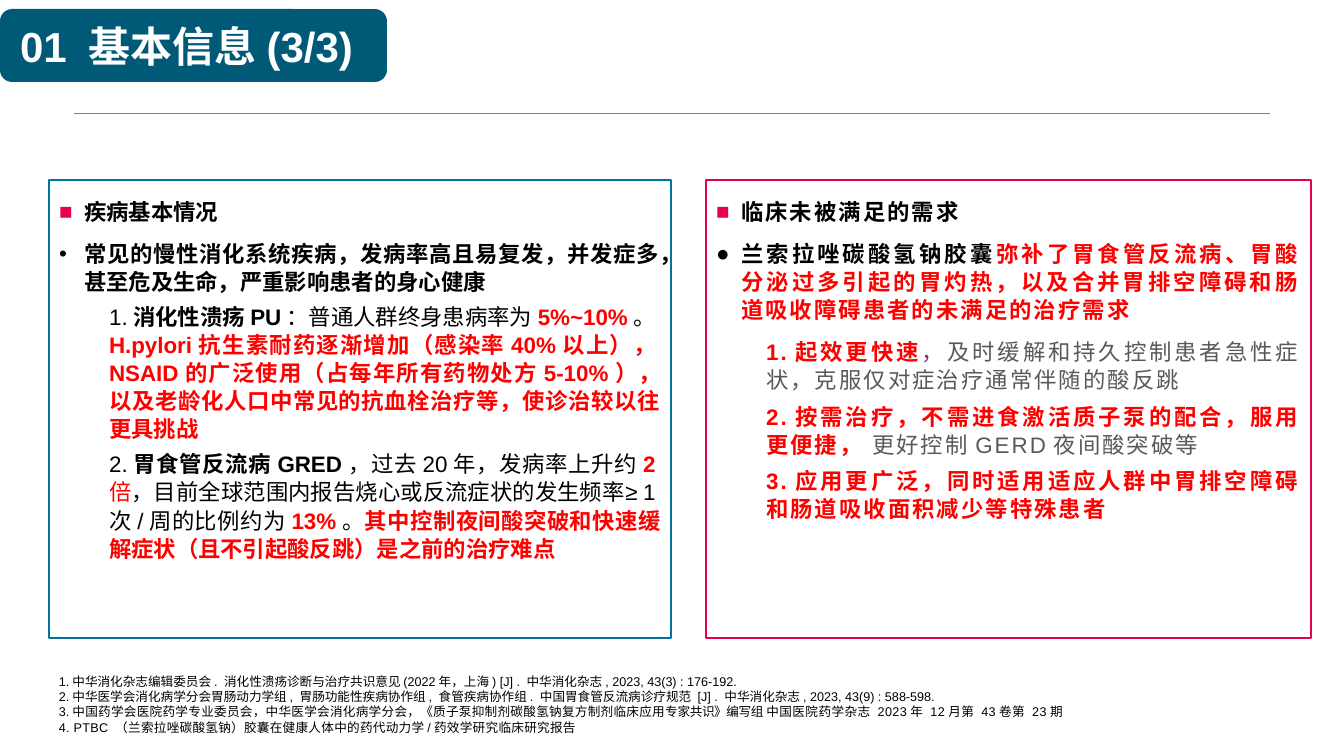
from lxml import etree
from pptx import Presentation, util as u
from pptx.dml.color import RGBColor
from pptx.enum import lang, shapes, text
from pptx.oxml.ns import qn

BLACK = RGBColor(0x00, 0x00, 0x00)
WHITE = RGBColor(0xFF, 0xFF, 0xFF)
RED = RGBColor(0xFF, 0x00, 0x00)
GREY = RGBColor(0x59, 0x59, 0x59)
PURPLE = RGBColor(0x91, 0x2C, 0x8D)
RULE = RGBColor(0x80, 0x80, 0x80)
TEAL = RGBColor(0x01, 0x59, 0x78)
BLUE = RGBColor(0x00, 0x73, 0x9F)
PINK = RGBColor(0xE5, 0x01, 0x50)

# Span styles: colour, bold
PLAIN, STRONG = (BLACK, False), (BLACK, True)
ALERT, ALERT_PLAIN = (RED, True), (RED, False)
MUTED, ACCENT = (GREY, False), (PURPLE, False)


def px(count):
    return u.Emu(round(count * 914400 / 100.8))


class Page:
    """Holds the style and the current slide; lengths are in px."""
    font = "Arial"
    indent = 25

    def __init__(self, deck, layout):
        self.slide = deck.slides.add_slide(deck.slide_layouts[layout])

    def place(self, box, left, top, width, height):
        box.left, box.top, box.width, box.height = map(px, (left, top, width, height))
        box.text_frame.word_wrap = True
        box.text_frame.auto_size = text.MSO_AUTO_SIZE.NONE
        return box

    def span(self, para, words, size, style, spacing=0):
        span = para.add_run()
        span.text = words
        font = span.font
        font.size, font.name = u.Pt(size), self.font
        font.color.rgb, font.bold = style
        font.language_id = lang.MSO_LANGUAGE_ID.SIMPLIFIED_CHINESE
        props = span._r.get_or_add_rPr()
        etree.SubElement(props, qn("a:ea"), typeface=self.font)
        if spacing:
            props.set("spc", str(round(spacing * 100)))

    def para(self, frame, index):
        return frame.paragraphs[0] if index == 0 else frame.add_paragraph()

    def rule(self, left, right, y):
        line = self.slide.shapes.add_connector(
            shapes.MSO_CONNECTOR.STRAIGHT, px(left), px(y), px(right), px(y))
        line.line.color.rgb, line.line.width = RULE, u.Pt(0.25)
        etree.SubElement(line._element.spPr, qn("a:effectLst"))

    def title(self, words, area, banner_area):
        title = self.place(self.slide.shapes.title, *area)
        banner = self.slide.shapes.add_shape(
            shapes.MSO_SHAPE.ROUNDED_RECTANGLE, *map(px, banner_area))
        banner.shadow.inherit = False
        banner.fill.solid()
        banner.fill.fore_color.rgb = TEAL
        banner.line.fill.background()
        title._element.addprevious(banner._element)
        title.text_frame.vertical_anchor = text.MSO_ANCHOR.MIDDLE
        para = title.text_frame.paragraphs[0]
        para.alignment = text.PP_ALIGN.CENTER
        self.span(para, words, 30, (WHITE, True))

    def bullet(self, para, mark, colour):
        props = para._p.get_or_add_pPr()
        steps = 1 if mark else 2
        props.set("marL", str(px(self.indent * steps)))
        props.set("indent", str(-px(self.indent) if mark else 0))
        if not mark:
            etree.SubElement(props, qn("a:buNone"))
            return
        tint = etree.SubElement(props, qn("a:buClr"))
        etree.SubElement(tint, qn("a:srgbClr"), val=str(colour))
        etree.SubElement(props, qn("a:buFont"), typeface=self.font)
        etree.SubElement(props, qn("a:buChar"), char=mark)

    def panel(self, box, area, colour, paragraphs, spacing=0):
        self.place(box, *area)
        box.line.color.rgb, box.line.width = colour, u.Pt(1.5)
        box.text_frame.vertical_anchor = text.MSO_ANCHOR.TOP
        for index, (mark, before, spans) in enumerate(paragraphs):
            para = self.para(box.text_frame, index)
            heading = index == 0
            para.level = 0 if mark else 1
            self.bullet(para, mark, PINK if heading else BLACK)
            para.alignment = text.PP_ALIGN.LEFT if heading else text.PP_ALIGN.JUSTIFY
            para.line_spacing = 1.5 if heading else u.Pt(20)
            para.space_before, para.space_after = u.Pt(before), u.Pt(0)
            for words, style in spans:
                self.span(para, words, 16, style, spacing)

    def references(self, area, entries):
        box = self.place(self.slide.shapes.add_textbox(0, 0, 0, 0), *area)
        for index, spans in enumerate(entries):
            para = self.para(box.text_frame, index)
            for words, spacing in spans:
                self.span(para, words, 9, PLAIN, spacing)


DISEASE = [
    ("■", 0, [("疾病基本情况", STRONG)]),
    ("•", 10, [("常见的慢性消化系统疾病，发病率高且易复发，并发症多，甚至危及生命，严重影响患者的身心健康", STRONG)]),
    (None, 5, [
        ("1.", PLAIN), ("消化性溃疡PU", STRONG), ("：普通人群终身患病率为", PLAIN),
        ("5%~10%", ALERT), ("。", PLAIN),
        ("H.pylori抗生素耐药逐渐增加（感染率40%以上），NSAID的广泛使用（占每年所有药物处方5-10%），"
         "以及老龄化人口中常见的抗血栓治疗等，使诊治较以往更具挑战", ALERT)]),
    (None, 5, [
        ("2.", PLAIN), ("胃食管反流病GRED", STRONG), ("，过去20年，发病率上升约", PLAIN),
        ("2", ALERT), ("倍", ALERT_PLAIN),
        ("，目前全球范围内报告烧心或反流症状的发生频率≥1次/周的比例约为", PLAIN),
        ("13%", ALERT), ("。", PLAIN),
        ("其中控制夜间酸突破和快速缓解症状（且不引起酸反跳）是之前的治疗难点", ALERT)]),
]
NEEDS = [
    ("■", 0, [("临床未被满足的需求", STRONG)]),
    ("●", 10, [
        ("兰索拉唑碳酸氢钠胶囊", STRONG),
        ("弥补了胃食管反流病、胃酸分泌过多引起的胃灼热，以及合并胃排空障碍和肠道吸收障碍患者的未满足的治疗需求", ALERT)]),
    (None, 10, [
        ("1.起效更快速", ALERT), ("，", ACCENT),
        ("及时缓解和持久控制患者急性症状，克服仅对症治疗通常伴随的酸反跳", MUTED)]),
    (None, 6, [
        ("2.按需治疗，不需进食激活质子泵的配合，服用更便捷， ", ALERT),
        ("更好控制GERD夜间酸突破等", MUTED)]),
    (None, 6, [("3.应用更广泛，同时适用适应人群中胃排空障碍和肠道吸收面积减少等特殊患者", ALERT)]),
]
REFERENCES = [
    [("1.中华消化杂志编辑委员会. 消化性溃疡诊断与治疗共识意见(2022年，上海) [J] . 中华消化杂志, 2023, 43(3) : 176-192.", 0)],
    [("2.中华医学会消化病学分会胃肠动力学组, 胃肠功能性疾病协作组, 食管疾病协作组. "
      "中国胃食管反流病诊疗规范 [J] . 中华消化杂志, 2023, 43(9) : 588-598.", 0)],
    [("3.", 0),
     ("中国药学会医院药学专业委员会，中华医学会消化病学分会，《质子泵抑制剂碳酸氢钠复方制剂临床应用专", 0.2),
     ("家共识》编写组 ", -0.3),
     ("中国医院药学杂志 2023年 12月第 43卷第 23期", 0.3)],
    [("4. PTBC （兰索拉唑碳酸氢钠）胶囊在健康人体中的药代动力学/药效学研究临床研究报告", 0.2)],
]


def main():
    deck = Presentation()
    deck.slide_width, deck.slide_height = px(1344), px(756)
    page = Page(deck, 3)
    left_body, right_body = list(page.slide.placeholders)[1:]

    # Heading
    page.title("01 基本信息(3/3)", (0, 15, 373, 61), (0, 9, 387, 73))
    page.rule(74, 1270, 113)

    # Two panels
    page.panel(left_body, (49, 180, 622, 458), BLUE, DISEASE)
    page.panel(right_body, (706, 180, 605, 458), PINK, NEEDS, spacing=1.5)

    # Sources
    page.references((49, 669, 1207, 72), REFERENCES)
    deck.save("out.pptx")


if __name__ == "__main__":
    main()
